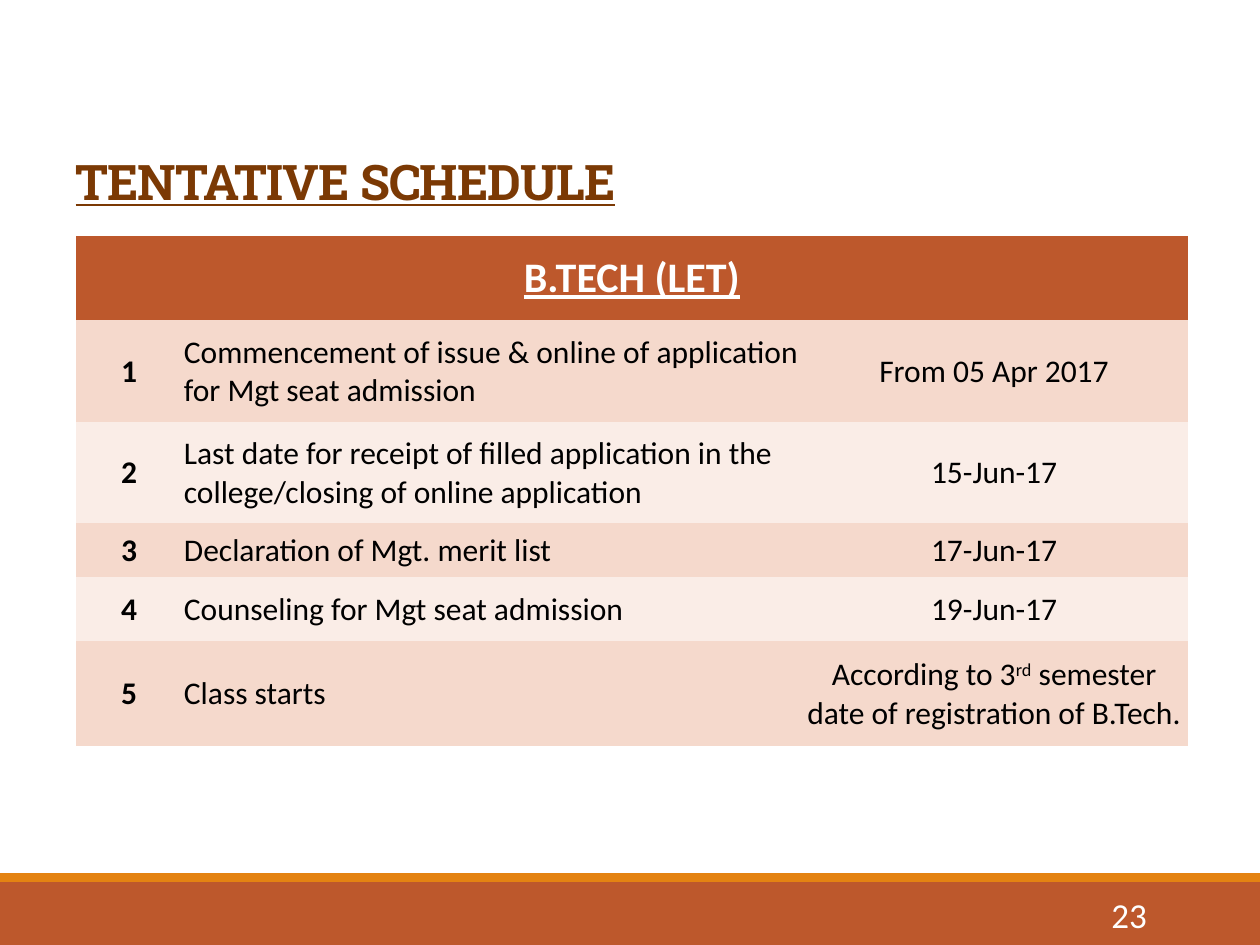
from typing import NamedTuple

from pptx import Presentation
from pptx.dml.color import RGBColor
from pptx.enum import shapes, text
from pptx.util import Inches, Pt

WIDTH, HEIGHT = 10, 7.5
RUST = RGBColor(0xBD, 0x58, 0x2C)
ORANGE = RGBColor(0xE4, 0x83, 0x12)
BROWN = RGBColor(0x7B, 0x39, 0x04)
PEACH = RGBColor(0xF5, 0xD9, 0xCC)
PALE = RGBColor(0xFA, 0xED, 0xE7)
WHITE = RGBColor(0xFF, 0xFF, 0xFF)
BLACK = RGBColor(0, 0, 0)
BODY_FONT = "Calibri"
PLAIN_TABLE = "{2D5ABB26-0587-4C30-8999-92F81FD0307C}"  # no style, no grid
COLUMNS = (0.85, 4.9, 3.08)
HEADER_HEIGHT = 0.67


class Step(NamedTuple):
    task: str
    date: tuple[str, ...]  # every second piece is superscript
    height: float


class Band(NamedTuple):
    top: float
    height: float
    color: RGBColor


STEPS = (
    Step("Commencement of issue & online of application for Mgt seat admission",
         ("From 05 Apr 2017",), 0.81),
    Step("Last date for receipt of filled application in the "
         "college/closing of online application", ("15-Jun-17",), 0.8),
    Step("Declaration of Mgt. merit list", ("17-Jun-17",), 0.43),
    Step("Counseling for Mgt seat admission", ("19-Jun-17",), 0.51),
    Step("Class starts",
         ("According to 3", "rd", " semester date of registration of B.Tech."), 0.83),
)
BANDS = (Band(7, 0.5, RUST), Band(6.93, 0.07, ORANGE))


def style(p, size: float, color: RGBColor, name: str = BODY_FONT,
          bold: bool = False, underline: bool = False) -> None:
    f = p.font
    f.size, f.name, f.bold, f.underline = Pt(size), name, bold, underline
    f.color.rgb = color


def draw_band(s, band: Band) -> None:
    sp = s.shapes.add_shape(shapes.MSO_SHAPE.RECTANGLE, 0, Inches(band.top),
                            Inches(WIDTH), Inches(band.height))
    sp.shadow.inherit = False
    sp.fill.solid()
    sp.fill.fore_color.rgb = band.color
    sp.line.fill.background()


def fill_cell(cell, pieces: tuple[str, ...], fill: RGBColor, centered: bool = True,
              size: float = 18, color: RGBColor = BLACK, bold: bool = False,
              underline: bool = False) -> None:
    cell.fill.solid()
    cell.fill.fore_color.rgb = fill
    cell.vertical_anchor = text.MSO_ANCHOR.MIDDLE
    cell.margin_left = cell.margin_right = cell.margin_top = Inches(0.01)
    cell.margin_bottom = 0
    p = cell.text_frame.paragraphs[0]
    p.alignment = text.PP_ALIGN.CENTER if centered else text.PP_ALIGN.LEFT
    style(p, size, color, bold=bold, underline=underline)
    for i, piece in enumerate(pieces):
        r = p.add_run()
        r.text = piece
        if i % 2:
            r._r.get_or_add_rPr().set("baseline", "30000")


def draw_title(s) -> None:
    sp = s.shapes.title
    sp.left, sp.top, sp.width, sp.height = map(Inches, (0.5, 1.1, 8.75, 0.62))
    tf = sp.text_frame
    tf.text = "TENTATIVE SCHEDULE"
    tf.vertical_anchor = text.MSO_ANCHOR.BOTTOM
    p = tf.paragraphs[0]
    p.alignment = text.PP_ALIGN.LEFT
    p.line_spacing = 0.85
    style(p, 28, BROWN, "Roboto Slab", bold=True, underline=True)
    p.runs[0]._r.get_or_add_rPr().set("spc", "-50")


def draw_schedule(s) -> None:
    heights = (HEADER_HEIGHT, *(step.height for step in STEPS))
    frame = s.shapes.add_table(len(heights), len(COLUMNS), Inches(0.6), Inches(1.87),
                               Inches(sum(COLUMNS)), Inches(sum(heights)))
    table = frame.table
    table._tbl.tblPr[0].text = PLAIN_TABLE
    for column, width in zip(table.columns, COLUMNS):
        column.width = Inches(width)
    for row, height in zip(table.rows, heights):
        row.height = Inches(height)

    # Heading across all columns
    table.cell(0, 0).merge(table.cell(0, len(COLUMNS) - 1))
    fill_cell(table.cell(0, 0), ("B.TECH (LET)",), RUST, size=24, color=WHITE,
              bold=True, underline=True)

    # Numbered steps on alternating tints
    for n, step in enumerate(STEPS, 1):
        tint = PEACH if n % 2 else PALE
        fill_cell(table.cell(n, 0), (str(n),), tint, bold=True)
        fill_cell(table.cell(n, 1), (step.task,), tint, centered=False)
        fill_cell(table.cell(n, 2), step.date, tint)


def draw_page_number(s) -> None:
    tf = s.shapes.add_textbox(*map(Inches, (8.12, 7.06, 1.08, 0.4))).text_frame
    tf.word_wrap = True
    tf.vertical_anchor = text.MSO_ANCHOR.MIDDLE
    p = tf.paragraphs[0]
    p.text = "23"
    p.alignment = text.PP_ALIGN.RIGHT
    style(p, 20, WHITE)


def main() -> None:
    prs = Presentation()
    prs.slide_width, prs.slide_height = Inches(WIDTH), Inches(HEIGHT)
    s = prs.slides.add_slide(prs.slide_layouts[5])  # title only
    for band in BANDS:
        draw_band(s, band)
    draw_title(s)
    draw_schedule(s)
    draw_page_number(s)
    prs.save("out.pptx")


if __name__ == "__main__":
    main()
